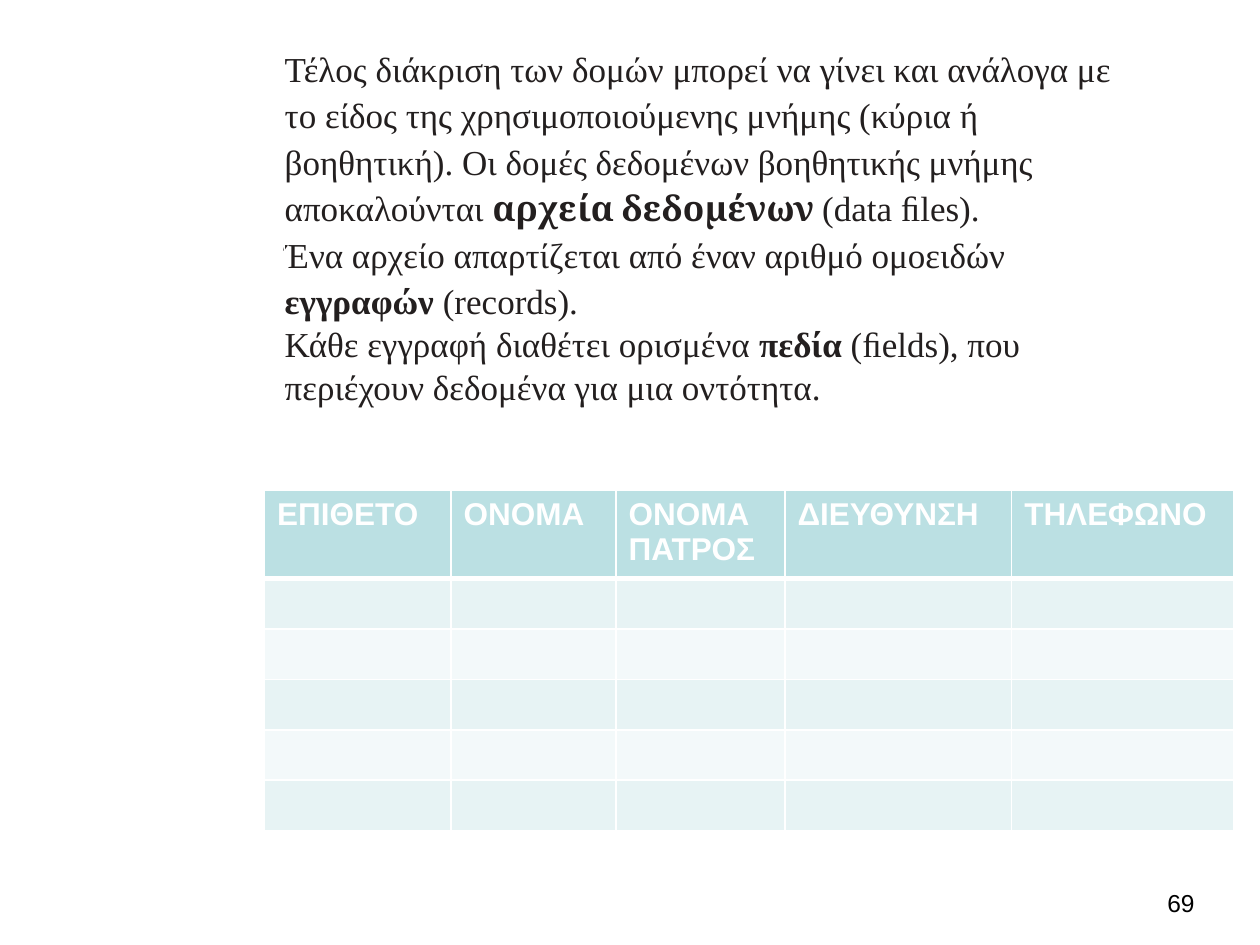
from pptx import Presentation
from pptx import util as u
from pptx.dml.color import RGBColor
from pptx.enum import text
from pptx.oxml import parse_xml
from pptx.oxml.ns import nsdecls

THEME = {
    "ink": "231F1F", "number": "000000", "white": "FFFFFF",
    "header": "BBE0E3", "bands": ("E7F3F4", "F3F9FA"),
    "serif": "Times New Roman", "accent": "Cambria", "sans": "Arial",
    "body_size": 20, "header_size": 18, "number_size": 14,
}

PARAGRAPHS = [
    (1.19, [
        ("Τέλος διάκριση των δομών μπορεί να γίνει και ανάλογα με το είδος της "
         "χρησιμοποιούμενης μνήμης (κύρια ή βοηθητική). Οι δομές δεδομένων "
         "βοηθητικής μνήμης αποκαλούνται ", "serif", False),
        ("αρχεία δεδομένων ", "accent", True),
        ("(data ﬁles).", "serif", False)]),
    (1.18, [
        ("Ένα αρχείο απαρτίζεται από έναν αριθμό ομοειδών ", "serif", False),
        ("εγγραφών ", "serif", True),
        ("(records).", "serif", False)]),
    (1.1, [
        ("Κάθε εγγραφή διαθέτει ορισμένα ", "serif", False),
        ("πεδία", "serif", True),
        (" (ﬁelds), που περιέχουν δεδομένα για μια οντότητα.", "serif", False)]),
]
FIELDS = [("ΕΠΙΘΕΤΟ", 1.48), ("ΟΝΟΜΑ", 1.31), ("ΟΝΟΜΑ ΠΑΤΡΟΣ", 1.34),
          ("ΔΙΕΥΘΥΝΣΗ", 1.8), ("ΤΗΛΕΦΩΝΟ", 1.76)]
RECORD_COUNT = 5
HEADER_HEIGHT, RECORD_HEIGHT = 0.65, 0.4
PAGE_NUMBER = "69"


def style(font, face, size, color, bold=False):
    font.name = THEME[face]
    font.size = u.Pt(THEME[size])
    font.bold = bold
    font.color.rgb = RGBColor.from_string(THEME[color])


def add_plain_table(page, rows, columns, left, top, width, height):
    table = page.shapes.add_table(
        rows, columns, *map(u.Inches, (left, top, width, height))).table
    table.first_row = table.horz_banding = False
    return table


def set_border(cell, side, points):
    line = parse_xml(
        f'<a:ln{side} {nsdecls("a")} w="{u.Pt(points)}"><a:solidFill>'
        f'<a:srgbClr val="{THEME["white"]}"/></a:solidFill></a:ln{side}>')
    cell._tc.get_or_add_tcPr().append(line)


def add_explanation(page):
    table = add_plain_table(page, 1, 1, 2.26, 0.35, 6.74, 3.07)
    cell = table.cell(0, 0)
    cell.fill.background()
    cell.margin_left = cell.margin_right = cell.margin_top = cell.margin_bottom = 0
    frame = cell.text_frame
    for index, (spacing, spans) in enumerate(PARAGRAPHS):
        para = frame.add_paragraph() if index else frame.paragraphs[0]
        para.line_spacing = spacing
        for words, face, bold in spans:
            span = para.add_run()
            span.text = words
            style(span.font, face, "body_size", "ink", bold)


def add_records(page):
    heights = [HEADER_HEIGHT] + [RECORD_HEIGHT] * RECORD_COUNT
    table = add_plain_table(page, len(heights), len(FIELDS), 2.1, 3.89,
                            sum(width for _, width in FIELDS), sum(heights))
    for column, (_, width) in zip(table.columns, FIELDS):
        column.width = u.Inches(width)
    for index, (row, height) in enumerate(zip(table.rows, heights)):
        row.height = u.Inches(height)
        color = THEME["bands"][(index - 1) % 2] if index else THEME["header"]
        for cell, (name, _) in zip(row.cells, FIELDS):
            for side in "LRTB":
                heavy = (index, side) in ((0, "B"), (1, "T"))
                set_border(cell, side, 3 if heavy else 1)
            cell.fill.solid()
            cell.fill.fore_color.rgb = RGBColor.from_string(color)
            para = cell.text_frame.paragraphs[0]
            if index == 0:
                para.text = name
                style(para.runs[0].font, "sans", "header_size", "white", True)


def add_page_number(page):
    box = page.shapes.add_textbox(*map(u.Inches, (8.08, 7, 1.5, 0.5)))
    box.text_frame.word_wrap = True
    para = box.text_frame.paragraphs[0]
    para.text = PAGE_NUMBER
    para.alignment = text.PP_ALIGN.RIGHT
    style(para.runs[0].font, "sans", "number_size", "number")


def main():
    deck = Presentation()
    deck.slide_width, deck.slide_height = u.Inches(10), u.Inches(7.5)
    page = deck.slides.add_slide(deck.slide_layouts[6])
    add_page_number(page)
    add_explanation(page)
    add_records(page)
    deck.save("out.pptx")


if __name__ == "__main__":
    main()
